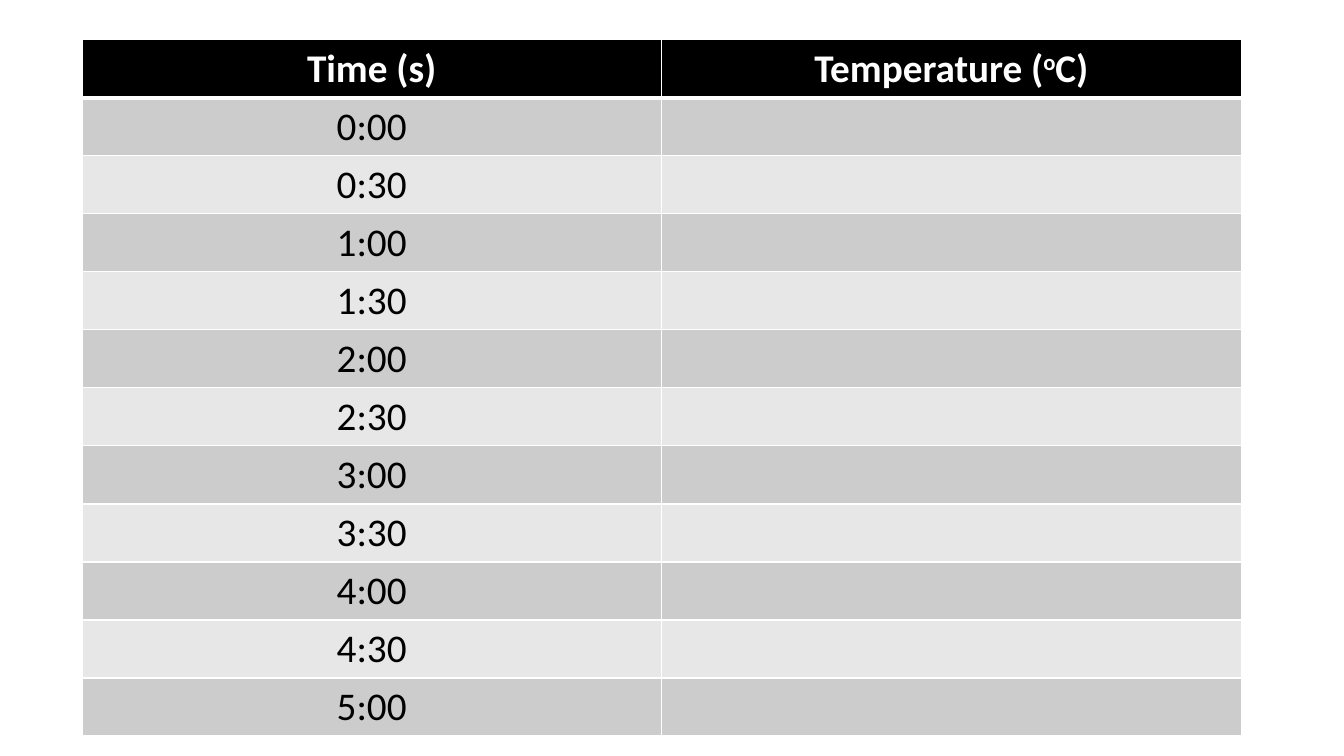
from dataclasses import dataclass

from lxml.etree import SubElement
from pptx import Presentation
from pptx.dml.color import RGBColor
from pptx.enum.text import MSO_ANCHOR as Anchor, PP_ALIGN as Align
from pptx.oxml.ns import qn
from pptx.table import _Cell as Cell
from pptx.util import Pt

COLORS = {
    "header": "000000",
    "header_text": "FFFFFF",
    "band_dark": "CCCCCC",
    "band_light": "E7E7E7",
    "text": "000000",
    "border": "FFFFFF",
}
FONT, FONT_SIZE = "Calibri", 28
LEFT, TOP = 58.5, 28.4
COLUMN_WIDTH, ROW_HEIGHT = 414, 41.4
THIN, THICK = 1, 3
STEP_SECONDS, LAST_SECOND = 30, 300


@dataclass(frozen=True)
class TextRun:
    text: str
    superscript: bool = False


@dataclass(frozen=True)
class RowStyle:
    fill: str
    color: str
    bold: bool = False
    top: float = THIN
    bottom: float = THIN


@dataclass(frozen=True)
class TableRow:
    cells: list[list[TextRun]]
    style: RowStyle


def set_borders(cell: Cell, style: RowStyle) -> None:
    properties = cell._tc.get_or_add_tcPr()
    widths = {"a:lnL": THIN, "a:lnR": THIN, "a:lnT": style.top, "a:lnB": style.bottom}
    for tag, width in widths.items():
        line = SubElement(properties, qn(tag), w=str(Pt(width)))
        solid = SubElement(line, qn("a:solidFill"))
        SubElement(solid, qn("a:srgbClr"), val=COLORS["border"])


def fill_cell(cell: Cell, runs: list[TextRun], style: RowStyle) -> None:
    set_borders(cell, style)
    cell.fill.solid()
    cell.fill.fore_color.rgb = RGBColor.from_string(COLORS[style.fill])
    cell.vertical_anchor = Anchor.TOP
    paragraph = cell.text_frame.paragraphs[0]
    paragraph.alignment = Align.CENTER
    paragraph.font.size = Pt(FONT_SIZE)
    for item in runs:
        run = paragraph.add_run()
        run.text = item.text
        run.font.name = FONT
        run.font.size = Pt(FONT_SIZE)
        run.font.bold = style.bold
        run.font.color.rgb = RGBColor.from_string(COLORS[style.color])
        if item.superscript:
            run._r.get_or_add_rPr().set("baseline", "30000")


def build_rows() -> list[TableRow]:
    # Header
    header = [
        [TextRun("Time (s)")],
        [TextRun("Temperature ("), TextRun("o", superscript=True), TextRun("C)")],
    ]
    rows = [TableRow(header, RowStyle("header", "header_text", bold=True, bottom=THICK))]

    # One banded row per time step, with the reading left blank
    for index, seconds in enumerate(range(0, LAST_SECOND + 1, STEP_SECONDS)):
        band = "band_light" if index % 2 else "band_dark"
        style = RowStyle(band, "text", top=THIN if index else THICK)
        time = f"{seconds // 60}:{seconds % 60:02d}"
        rows.append(TableRow([[TextRun(time)], []], style))
    return rows


def main() -> None:
    presentation = Presentation()
    presentation.slide_width, presentation.slide_height = Pt(960), Pt(540)
    slide = presentation.slides.add_slide(presentation.slide_layouts[6])

    # Recording table
    rows = build_rows()
    column_count = len(rows[0].cells)
    table = slide.shapes.add_table(
        len(rows), column_count, Pt(LEFT), Pt(TOP),
        Pt(COLUMN_WIDTH * column_count), Pt(ROW_HEIGHT * len(rows)),
    ).table
    for column in table.columns:
        column.width = Pt(COLUMN_WIDTH)
    for row_index, row in enumerate(rows):
        table.rows[row_index].height = Pt(ROW_HEIGHT)
        for column_index, runs in enumerate(row.cells):
            fill_cell(table.cell(row_index, column_index), runs, row.style)

    presentation.save("out.pptx")


if __name__ == "__main__":
    main()
